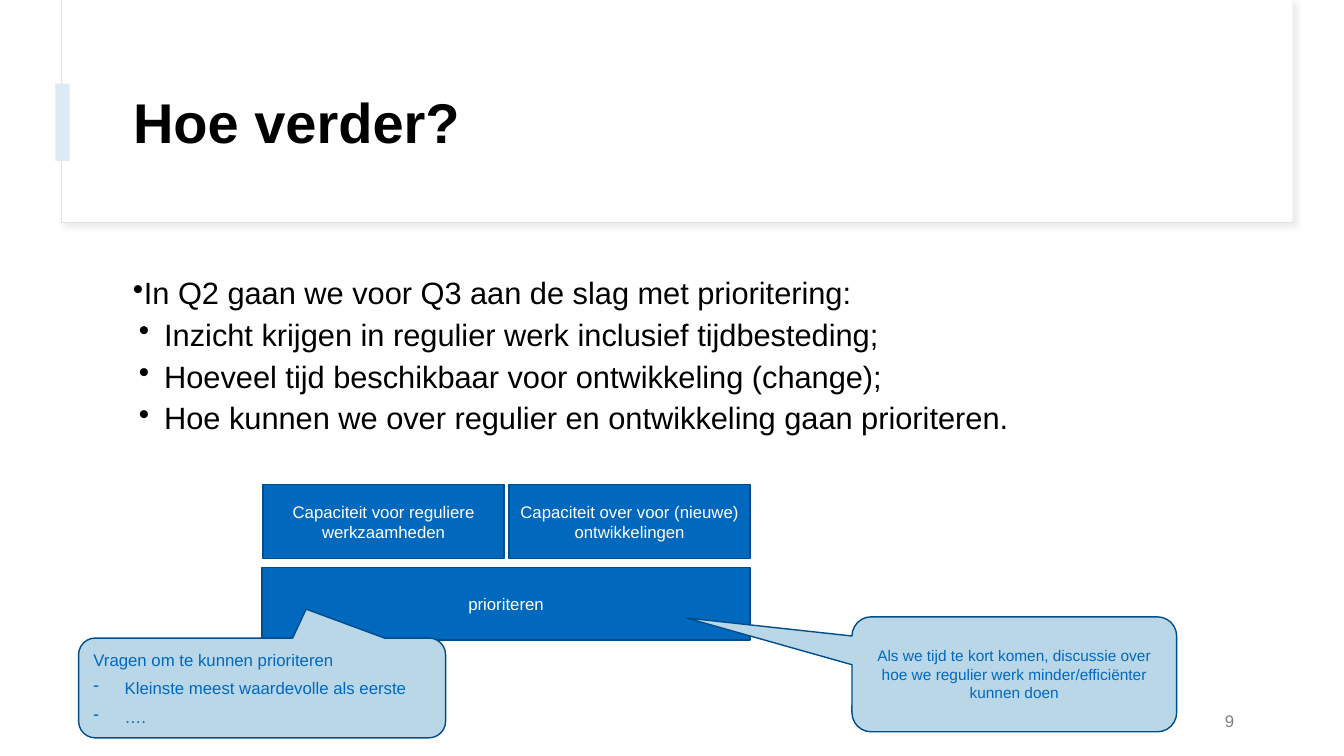
from lxml.etree import SubElement
from pptx import Presentation
from pptx.dml.color import RGBColor
from pptx.enum.shapes import MSO_SHAPE as SHAPE
from pptx.enum.text import MSO_ANCHOR as ANCHOR, PP_ALIGN as ALIGN
from pptx.oxml.ns import qn
from pptx.util import Emu, Pt

EMU_PER_PX = 9144
COLORS = {
    "white": "FFFFFF",
    "black": "000000",
    "grey": "808080",
    "frame": "E1E1E1",
    "shadow": "D9D9D9",
    "accent": "DCEBF3",
    "blue": "0068BD",
    "navy": "004D8C",
    "pale": "BAD7E7",
}


def px(n):
    return Emu(n * EMU_PER_PX)


def rgb(name):
    return RGBColor.from_string(COLORS[name])


class SlideBuilder:
    font = "Arial"

    def __init__(self, prs):
        self.slide = prs.slides.add_slide(prs.slide_layouts[5])
        self.shapes = self.slide.shapes

    def fill_text(self, sp, lines, size, color, align=ALIGN.LEFT, anchor=ANCHOR.MIDDLE,
                  bold=False, spacing=None, after=6):
        tf = sp.text_frame
        tf.word_wrap = True
        tf.vertical_anchor = anchor
        tf.text = "\n".join(lines)
        for p in tf.paragraphs:
            p.alignment = align
            p.space_before = Pt(0)
            p.space_after = Pt(after)
            if spacing:
                p.line_spacing = spacing
            for r in p.runs:
                r.font.name = self.font
                r.font.size = Pt(size)
                r.font.bold = bold
                r.font.color.rgb = rgb(color)
        return tf

    def bullet(self, p, char, margin, indent):
        pPr = p._p.get_or_add_pPr()
        pPr.set("marL", str(px(margin)))
        pPr.set("indent", str(px(indent)))
        SubElement(pPr, qn("a:buChar"), char=char)

    def title(self, text, box):
        sp = self.shapes.title
        sp.left, sp.top, sp.width, sp.height = map(px, box)
        self.shapes._spTree.append(sp._element)
        self.fill_text(sp, [text], 40, "black", bold=True, spacing=0.9, after=0)

    def text(self, lines, box, size, color, **style):
        sp = self.shapes.add_textbox(*map(px, box))
        return self.fill_text(sp, lines, size, color, **style)

    def shape(self, box, fill, line=None, weight=1, kind=SHAPE.RECTANGLE):
        sp = self.shapes.add_shape(kind, *map(px, box))
        sp.shadow.inherit = False
        sp.fill.solid()
        sp.fill.fore_color.rgb = rgb(fill)
        if line:
            sp.line.color.rgb = rgb(line)
            sp.line.width = Pt(weight)
        else:
            sp.line.fill.background()
        return sp

    def drop_shadow(self, sp):
        effects = sp._element.spPr.find(qn("a:effectLst"))
        shadow = SubElement(effects, qn("a:outerShdw"), blurRad=str(Pt(4)),
                            dist=str(Pt(3)), dir="2700000", algn="tl", rotWithShape="0")
        color = SubElement(shadow, qn("a:srgbClr"), val=COLORS["shadow"])
        SubElement(color, qn("a:alpha"), val="50000")

    def block(self, text, box):
        sp = self.shape(box, "blue", "navy")
        self.fill_text(sp, [text], 12, "white", align=ALIGN.CENTER)

    def callout(self, lines, box, tip, size, align=ALIGN.LEFT):
        sp = self.shape(box, "pale", "navy", kind=SHAPE.ROUNDED_RECTANGULAR_CALLOUT)
        sp.adjustments[0], sp.adjustments[1] = tip
        return self.fill_text(sp, lines, size, "blue", align=align)


def main():
    prs = Presentation()
    prs.slide_width, prs.slide_height = px(1333), px(750)
    s = SlideBuilder(prs)

    frame = s.shape((61, 0, 1221, 221), "white", "frame", 0.75)
    s.drop_shadow(frame)
    s.shape((62, 0, 1220, 220), "white")
    s.title("Hoe verder?", (122, 60, 1112, 129))
    s.shape((55, 83, 14, 77), "accent")

    plan = s.text([
        "In Q2 gaan we voor Q3 aan de slag met prioritering:",
        "Inzicht krijgen in regulier werk inclusief tijdbesteding;",
        "Hoeveel tijd beschikbaar voor ontwikkeling (change);",
        "Hoe kunnen we over regulier en ontwikkeling gaan prioriteren.",
    ], (122, 271, 1112, 404), 22, "black", anchor=ANCHOR.TOP, spacing=0.9)
    for i, p in enumerate(plan.paragraphs):
        s.bullet(p, "•", 31 if i else 0, -25)

    s.text(["9"], (934, 695, 300, 40), 12, "grey", align=ALIGN.RIGHT)

    capacities = ["Capaciteit voor reguliere werkzaamheden",
                  "Capaciteit over voor (nieuwe) ontwikkelingen"]
    for i, capacity in enumerate(capacities):
        s.block(capacity, (261 + 244 * i, 481, 239, 73))
    s.block("prioriteren", (260, 563, 484, 72))

    s.callout(["Als we tijd te kort komen, discussie over hoe we regulier werk "
               "minder/efficiënter kunnen doen"],
              (845, 612, 322, 114), (-1.01, -0.49), 11, ALIGN.CENTER)
    questions = s.callout(["Vragen om te kunnen prioriteren",
                           "Kleinste meest waardevolle als eerste", "…."],
                          (78, 633, 364, 99), (0.12, -0.79), 12)
    for p in questions.paragraphs[1:]:
        s.bullet(p, "-", 31, -31)

    prs.save("out.pptx")


if __name__ == "__main__":
    main()
